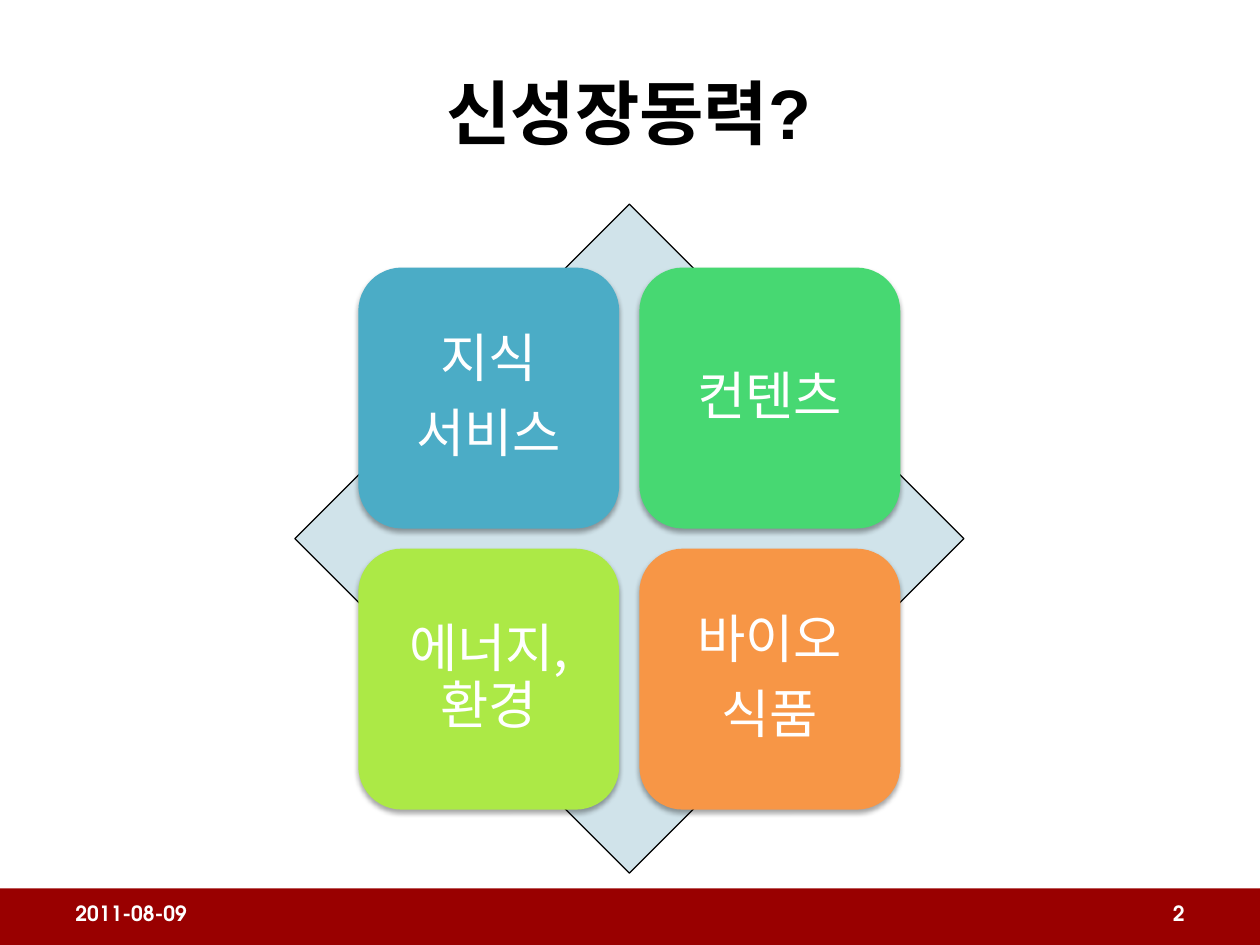
from lxml.etree import SubElement
from pptx import Presentation
from pptx.dml.color import RGBColor
from pptx.enum.shapes import MSO_SHAPE as Shape
from pptx.enum.text import MSO_ANCHOR as Anchor, PP_ALIGN as Align
from pptx.oxml.ns import qn
from pptx.util import Inches, Pt

HANGUL = "Noto Sans CJK KR"


def color(code):
    return RGBColor.from_string(code)


def style(par, face, size, code, bold=False, align=Align.LEFT):
    par.alignment = align
    for run in par.runs:
        font = run.font
        font.name, font.size, font.bold = face, Pt(size), bold
        font.color.rgb = color(code)
        SubElement(run.font._element, qn("a:ea"), typeface=HANGUL)


def block(slide, kind, box, fill, line=None):
    shape = slide.shapes.add_shape(kind, *map(Inches, box))
    shape.shadow.inherit = False
    shape.fill.solid()
    shape.fill.fore_color.rgb = color(fill)
    if line:
        shape.line.color.rgb = color(line)
        shape.line.width = Pt(0.75)
    else:
        shape.line.fill.background()
    return shape


def shade(shape):
    """Give the shape a soft shadow that falls straight down."""
    effects = shape._element.spPr.find(qn("a:effectLst"))
    outer = SubElement(effects, qn("a:outerShdw"), blurRad=str(Pt(3.1)),
                       dist=str(Pt(1.8)), dir="5400000", rotWithShape="0")
    tone = SubElement(outer, qn("a:srgbClr"), val="000000")
    SubElement(tone, qn("a:alpha"), val="35000")


def heading(slide, box, text):
    title = slide.shapes.title
    title.left, title.top, title.width, title.height = map(Inches, box)
    frame = title.text_frame
    frame.text = text
    frame.vertical_anchor = Anchor.MIDDLE
    style(frame.paragraphs[0], "Arial", 40, "000000", True, Align.CENTER)


def footer(slide, box, date, number):
    left, top, width, height = box
    block(slide, Shape.RECTANGLE, box, "990000")
    edge, span = 0.5, 2.33
    notes = [(left + edge, date, Align.LEFT),
             (left + width - edge - span, number, Align.RIGHT)]
    for x, text, align in notes:
        label = slide.shapes.add_textbox(*map(Inches, (x, top, span, 0.4)))
        frame = label.text_frame
        frame.word_wrap = True
        frame.vertical_anchor = Anchor.MIDDLE
        frame.text = text
        style(frame.paragraphs[0], "TeX Gyre Adventor", 12, "FFFFFF", True, align)


def tile(slide, box, text, fill):
    shape = block(slide, Shape.ROUNDED_RECTANGLE, box, fill)
    shade(shape)
    frame = shape.text_frame
    frame.word_wrap = True
    frame.vertical_anchor = Anchor.MIDDLE
    frame.margin_left = frame.margin_right = Inches(0.12)
    frame.margin_top = frame.margin_bottom = Inches(0.12)
    frame.text = text
    for par in frame.paragraphs:
        par.line_spacing = 0.9
        par.space_after = Pt(10.5)
        style(par, HANGUL, 30, "FFFFFF", align=Align.CENTER)


def matrix(slide, box, items):
    """Four tiles in a two by two grid over a diamond."""
    left, top, width, _ = box
    block(slide, Shape.DIAMOND, box, "D0E3EA", "000000")
    side, gap = width * 0.39, 0.16
    inset = (width - 2 * side - gap) / 2
    for i, (text, fill) in enumerate(items):
        row, col = divmod(i, 2)
        x = left + inset + col * (side + gap)
        y = top + inset + row * (side + gap)
        tile(slide, (x, y, side, side), text, fill)


def main():
    deck = Presentation()
    deck.slide_width, deck.slide_height = Inches(10), Inches(7.5)
    slide = deck.slides.add_slide(deck.slide_layouts[5])

    footer(slide, (0, 7.05, 10, 0.45), "2011-08-09", "2")
    heading(slide, (0.49, 0.39, 9, 0.99), "신성장동력?")
    matrix(slide, (2.34, 1.62, 5.31, 5.31), [
        ("지식\n서비스", "4BACC6"),
        ("컨텐츠", "47D872"),
        ("에너지, 환경", "ACE946"),
        ("바이오\n식품", "F79646"),
    ])
    deck.save("out.pptx")


if __name__ == "__main__":
    main()
